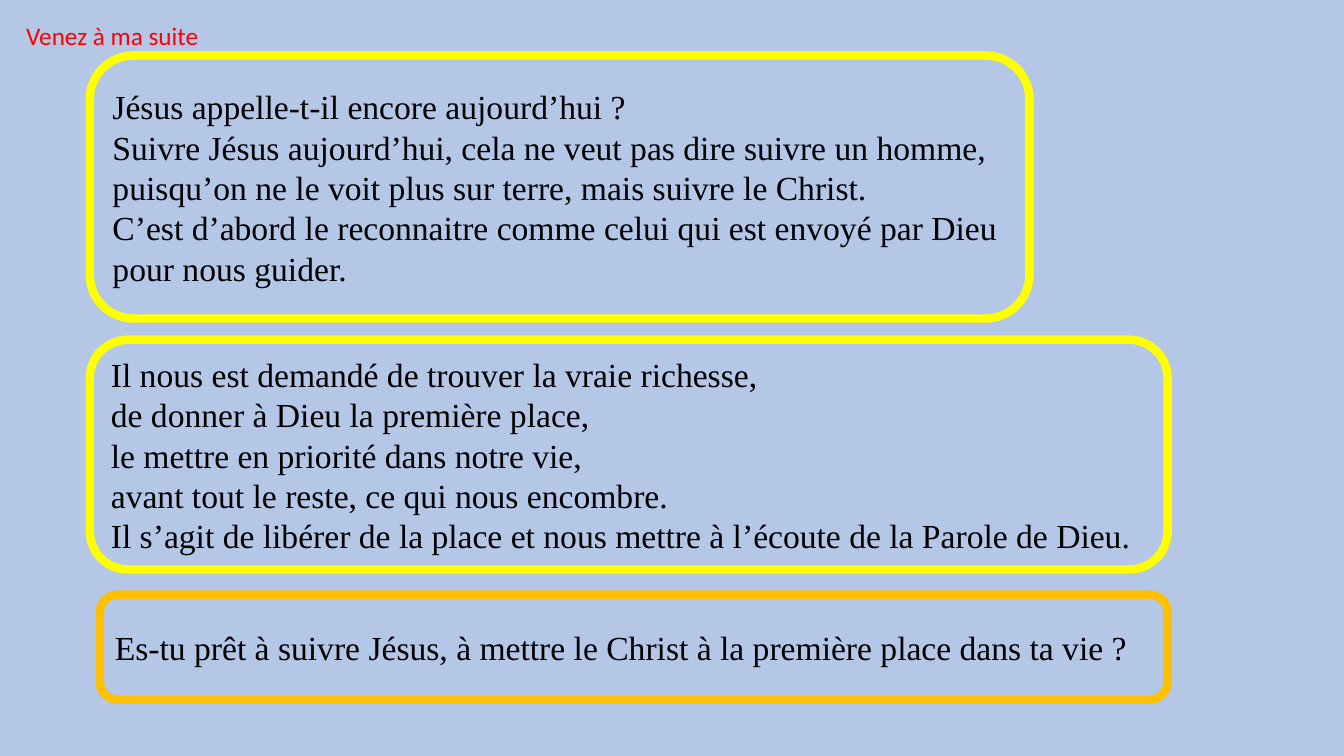
from pptx import Presentation
from pptx.util import Inches, Pt
from pptx.dml.color import RGBColor
from pptx.enum import shapes as sh, text as tx

CALL = [
    "Jésus appelle-t-il encore aujourd’hui ?",
    "Suivre Jésus aujourd’hui, cela ne veut pas dire suivre un homme, "
    "puisqu’on ne le voit plus sur terre, mais suivre le Christ.",
    "C’est d’abord le reconnaitre comme celui qui est envoyé par Dieu "
    "pour nous guider.",
]
WEALTH = [
    "Il nous est demandé de trouver la vraie richesse,",
    "de donner à Dieu la première place,",
    "le mettre en priorité dans notre vie,",
    "avant tout le reste, ce qui nous encombre.",
    "Il s’agit de libérer de la place et nous mettre à l’écoute "
    "de la Parole de Dieu.",
]
ASK = ["Es-tu prêt à suivre Jésus, à mettre le Christ à la première place "
       "dans ta vie ?"]


def color(code):
    return RGBColor.from_string(code)


def place(shape, box):
    shape.left, shape.top, shape.width, shape.height = map(Inches, box)


def write(para, words, face, size, code):
    run = para.add_run()
    run.text = words
    run.font.name = face
    run.font.size = Pt(size)
    run.font.color.rgb = color(code)


def heading(slide, box, words):
    title = slide.shapes.title
    place(title, box)
    frame = title.text_frame
    frame.word_wrap = True
    frame.auto_size = tx.MSO_AUTO_SIZE.NONE
    frame.vertical_anchor = tx.MSO_ANCHOR.TOP
    para = frame.paragraphs[0]
    para.alignment = tx.PP_ALIGN.LEFT
    write(para, words, "Calibri", 18, "FF0000")


def panel(slide, box, lines, edge):
    card = slide.shapes.add_shape(
        sh.MSO_SHAPE.ROUNDED_RECTANGLE, *map(Inches, box))
    card.shadow.inherit = False
    card.fill.background()
    card.line.color.rgb = color(edge)
    card.line.width = Pt(6)
    frame = card.text_frame
    frame.word_wrap = True
    frame.vertical_anchor = tx.MSO_ANCHOR.MIDDLE
    para = frame.paragraphs[0]
    para.alignment = tx.PP_ALIGN.LEFT
    for i, line in enumerate(lines):
        if i:
            para.add_line_break()
        write(para, line, "Times New Roman", 24, "000000")


def main():
    deck = Presentation()
    deck.slide_width, deck.slide_height = Inches(13.33), Inches(7.5)
    slide = deck.slides.add_slide(deck.slide_layouts.get_by_name("Title Only"))
    back = slide.background.fill
    back.solid()
    back.fore_color.rgb = color("B4C7E7")

    # Heading
    heading(slide, (0.16, 0.15, 6.67, 0.4), "Venez à ma suite")

    # Two teachings, then the closing question
    panel(slide, (0.89, 0.55, 9.32, 2.61), CALL, "FFFF00")
    panel(slide, (0.89, 3.37, 10.69, 2.28), WEALTH, "FFFF00")
    panel(slide, (0.99, 5.9, 10.59, 1.04), ASK, "FFC000")

    deck.save("out.pptx")


if __name__ == "__main__":
    main()
